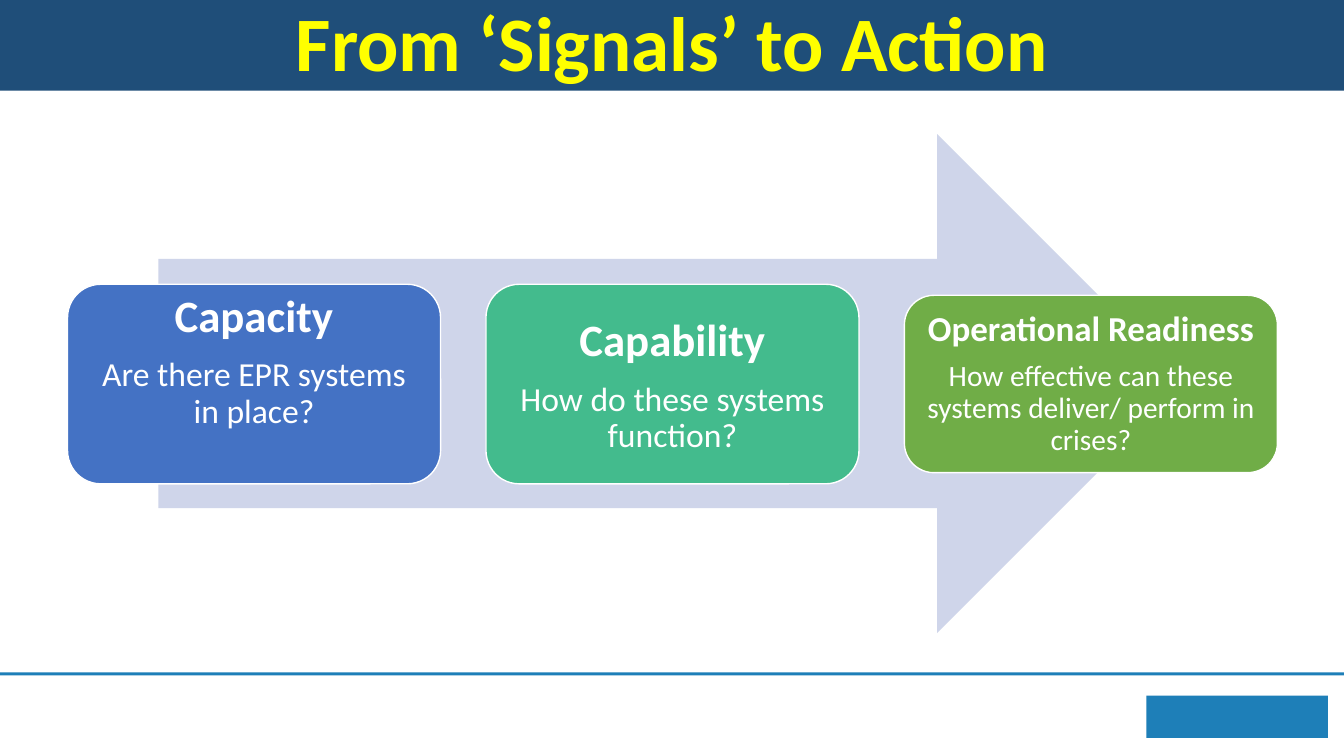
"""Builds the slide 'From Signals to Action': three steps on a wide arrow."""
from pptx import Presentation
from pptx.dml.color import RGBColor
from pptx.enum.shapes import MSO_SHAPE
from pptx.enum.text import MSO_ANCHOR, PP_ALIGN
from pptx.util import Inches, Pt

RECT = MSO_SHAPE.RECTANGLE
ROUND = MSO_SHAPE.ROUNDED_RECTANGLE
ARROW = MSO_SHAPE.RIGHT_ARROW
TOP, MIDDLE = MSO_ANCHOR.TOP, MSO_ANCHOR.MIDDLE
CENTER = PP_ALIGN.CENTER

COLORS = {
    "navy": "1F4E79", "yellow": "FFFF00", "sky": "1E7FB8", "pale": "CFD5EA",
    "blue": "4472C4", "teal": "43BB8D", "green": "70AD47", "white": "FFFFFF",
}

deck = Presentation()
deck.slide_width, deck.slide_height = Inches(13.33), Inches(7.5)
slide = deck.slides.add_slide(deck.slide_layouts[6])


def add_box(kind, left, top, width, height, fill):
    shape = slide.shapes.add_shape(
        kind, Inches(left), Inches(top), Inches(width), Inches(height))
    shape.shadow.inherit = False
    shape.fill.solid()
    shape.fill.fore_color.rgb = RGBColor.from_string(COLORS[fill])
    shape.line.fill.background()
    return shape


def add_text(shape, lines, color, anchor, side, top, bottom):
    frame = shape.text_frame
    frame.word_wrap = True
    frame.vertical_anchor = anchor
    frame.margin_left = frame.margin_right = Inches(side)
    frame.margin_top, frame.margin_bottom = Inches(top), Inches(bottom)
    for i, (text, size, bold, after) in enumerate(lines):
        para = frame.add_paragraph() if i else frame.paragraphs[0]
        para.alignment = CENTER
        para.line_spacing = 0.9
        para.space_after = Pt(after)
        run = para.add_run()
        run.text = text
        run.font.name = "Calibri"
        run.font.size = Pt(size)
        run.font.bold = bold
        run.font.color.rgb = RGBColor.from_string(COLORS[color])


add_box(RECT, 0, 6.67, 13.33, 0.03, "sky")
add_box(RECT, 11.37, 6.9, 1.8, 0.42, "sky")
add_box(ARROW, 1.57, 1.33, 10.2, 4.95, "pale")

STEPS = [
    ("Capacity", "Are there EPR systems in place?",
     "blue", 1.98, 32, 24, 11, TOP, 0.13, 0),
    ("Capability", "How do these systems function?",
     "teal", 1.98, 32, 24, 11, TOP, 0.13, 0.24),
    ("Operational Readiness",
     "How effective can these systems deliver/ perform in crises?",
     "green", 1.76, 25, 21, 8.5, MIDDLE, 0.1, 0),
]
MID, LEFT, WIDTH, PITCH = 3.81, 0.67, 3.7, 4.15
for i, (head, body, fill, height, big, small, gap, anchor, side, top) in enumerate(STEPS):
    step = add_box(ROUND, LEFT + i * PITCH, MID - height / 2, WIDTH, height, fill)
    step.line.color.rgb = RGBColor.from_string(COLORS["white"])
    step.line.width = Pt(1)
    lines = [(head, big, True, gap), (body, small, False, 0)]
    add_text(step, lines, "white", anchor, side, top, 0)

title = add_box(RECT, 0, 0, 13.33, 0.9, "navy")
add_text(title, [("From ‘Signals’ to Action", 55, True, 0)],
         "yellow", TOP, 0.1, 0.05, 0)

deck.save("out.pptx")
